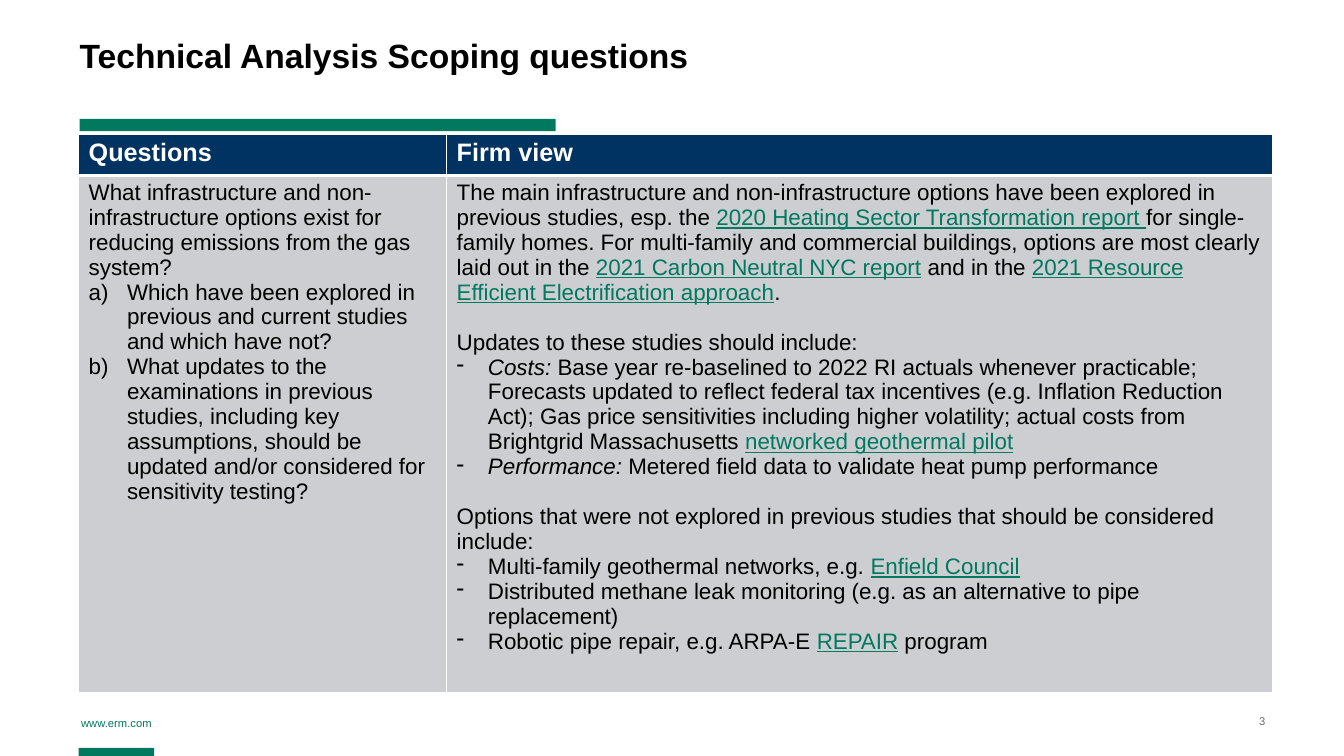
import pptx
import pptx.dml.color
import pptx.enum.shapes
import pptx.enum.text
import pptx.oxml
import pptx.oxml.ns
import pptx.util

Inches = pptx.util.Inches
Pt = pptx.util.Pt
Align = pptx.enum.text.PP_ALIGN
Anchor = pptx.enum.text.MSO_ANCHOR

GREEN, LINK, NAVY, GREY = "00795F", "00795E", "003361", "CCCED2"
BLACK, WHITE, NUMBER_GREY = "000000", "FFFFFF", "666D71"
NAMESPACE = pptx.oxml.ns.nsdecls("a")
LETTER = '<a:buAutoNum %s type="alphaLcParenR"/>' % NAMESPACE
DASH = '<a:buChar %s char="-"/>' % NAMESPACE

# Each paragraph: bullet, indent in inches, space before in points, runs of (text, style)
QUESTIONS = [
    (None, 0, 0, [("What infrastructure and non-infrastructure options exist for reducing "
                   "emissions from the gas system?", "")]),
    (LETTER, 0.38, 0, [("Which have been explored in previous and current studies and which "
                        "have not?", "")]),
    (LETTER, 0.38, 0, [("What updates to the examinations in previous studies, including key "
                        "assumptions, should be updated and/or considered for sensitivity "
                        "testing?", "")]),
]
VIEW = [
    (None, 0, 0, [
        ("The main infrastructure and non-infrastructure options have been explored in "
         "previous studies, esp. the ", ""),
        ("2020 Heating Sector Transformation report ", "link"),
        ("for single-family homes. For multi-family and commercial buildings, options are "
         "most clearly laid out in the ", ""),
        ("2021 Carbon Neutral NYC report", "link"),
        (" and in the ", ""),
        ("2021 Resource Efficient Electrification approach", "link"),
        (".", "")]),
    (None, 0, 18, [("Updates to these studies should include:", "")]),
    (DASH, 0.31, 0, [
        ("Costs: ", "italic"),
        ("Base year re-baselined to 2022 RI actuals whenever practicable; Forecasts updated "
         "to reflect federal tax incentives (e.g. Inflation Reduction Act); Gas price "
         "sensitivities including higher volatility; actual costs from Brightgrid "
         "Massachusetts ", ""),
        ("networked geothermal pilot", "link")]),
    (DASH, 0.31, 0, [("Performance:", "italic"),
                     (" Metered field data to validate heat pump performance", "")]),
    (None, 0, 18, [("Options that were not explored in previous studies that should be "
                    "considered include:", "")]),
    (DASH, 0.31, 0, [("Multi-family geothermal networks, e.g. ", ""),
                     ("Enfield Council", "link")]),
    (DASH, 0.31, 0, [("Distributed methane leak monitoring (e.g. as an alternative to pipe "
                      "replacement)", "")]),
    (DASH, 0.31, 0, [("Robotic pipe repair, e.g. ARPA-E ", ""), ("REPAIR", "link"),
                     (" program", "")]),
]


def rgb(value):
    return pptx.dml.color.RGBColor.from_string(value)


class SlideBuilder:
    def __init__(self, slide, font_name="Arial"):
        self.slide = slide
        self.font_name = font_name

    def format_run(self, run, size, color, bold=False):
        run.font.name = self.font_name
        run.font.size = Pt(size)
        run.font.bold = bold
        run.font.color.rgb = rgb(color)

    def bar(self, left, top, width, height):
        shape = self.slide.shapes.add_shape(
            pptx.enum.shapes.MSO_SHAPE.RECTANGLE,
            Inches(left), Inches(top), Inches(width), Inches(height))
        shape.shadow.inherit = False
        shape.fill.solid()
        shape.fill.fore_color.rgb = rgb(GREEN)
        shape.line.fill.background()

    def text(self, left, top, width, height, text, size, color, align=Align.LEFT,
             anchor=Anchor.TOP, bold=False, line_spacing=None):
        shape = self.slide.shapes.add_textbox(
            Inches(left), Inches(top), Inches(width), Inches(height))
        frame = shape.text_frame
        frame.word_wrap = True
        frame.vertical_anchor = anchor
        frame.margin_left = frame.margin_right = frame.margin_top = frame.margin_bottom = 0
        frame.text = text
        paragraph = frame.paragraphs[0]
        paragraph.alignment = align
        paragraph.line_spacing = line_spacing
        self.format_run(paragraph.runs[0], size, color, bold)

    def table(self, left, top, widths, heights):
        table = self.slide.shapes.add_table(
            len(heights), len(widths), Inches(left), Inches(top),
            Inches(sum(widths)), Inches(sum(heights))).table
        table.first_row = table.horz_banding = False
        for column, width in zip(table.columns, widths):
            column.width = Inches(width)
        for row, height in zip(table.rows, heights):
            row.height = Inches(height)
        return table

    def style_cell(self, cell, fill, top_line, bottom_line):
        """Fill the cell and give it white borders; line widths are in points."""
        cell.fill.solid()
        cell.fill.fore_color.rgb = rgb(fill)
        properties = cell._tc.get_or_add_tcPr()
        borders = [("lnL", 1), ("lnR", 1), ("lnT", top_line), ("lnB", bottom_line)]
        for position, (tag, width) in enumerate(borders):
            properties.insert(position, pptx.oxml.parse_xml(
                f'<a:{tag} {NAMESPACE} w="{Pt(width)}"><a:solidFill>'
                f'<a:srgbClr val="{WHITE}"/></a:solidFill></a:{tag}>'))

    def header_cell(self, cell, text):
        self.style_cell(cell, NAVY, 1, 3)
        cell.text_frame.text = text
        self.format_run(cell.text_frame.paragraphs[0].runs[0], 18, WHITE, True)

    def body_cell(self, cell, content):
        self.style_cell(cell, GREY, 3, 1)
        frame = cell.text_frame
        for index, (bullet, indent, space, runs) in enumerate(content):
            paragraph = frame.add_paragraph() if index else frame.paragraphs[0]
            if space:
                paragraph.space_before = Pt(space)
            if bullet:
                properties = paragraph._p.get_or_add_pPr()
                properties.set("marL", str(Inches(indent)))
                properties.set("indent", str(-Inches(indent)))
                properties.append(pptx.oxml.parse_xml(bullet))
            for text, style in runs:
                run = paragraph.add_run()
                run.text = text
                self.format_run(run, 16, LINK if style == "link" else BLACK)
                run.font.underline = style == "link"
                run.font.italic = style == "italic"


def main():
    presentation = pptx.Presentation()
    presentation.slide_width = Inches(13.33)
    presentation.slide_height = Inches(7.5)
    builder = SlideBuilder(presentation.slides.add_slide(presentation.slide_layouts[6]))

    builder.text(0.78, 7.11, 0.75, 0.13, "www.erm.com", 8, GREEN, Align.CENTER)
    builder.bar(0.78, 7.42, 0.75, 0.08)
    builder.bar(0.79, 1.18, 4.72, 0.12)
    builder.text(12.25, 7.09, 0.3, 0.13, "3", 8, NUMBER_GREY, Align.RIGHT, Anchor.BOTTOM)
    builder.text(0.79, 0.39, 10.3, 0.79, "Technical Analysis Scoping questions", 24, BLACK,
                 bold=True, line_spacing=0.9)

    table = builder.table(0.78, 1.33, [3.65, 8.19], [0.41, 4.78])
    columns = [("Questions", QUESTIONS), ("Firm view", VIEW)]
    for index, (heading, content) in enumerate(columns):
        builder.header_cell(table.cell(0, index), heading)
        builder.body_cell(table.cell(1, index), content)

    presentation.save("out.pptx")


if __name__ == "__main__":
    main()
